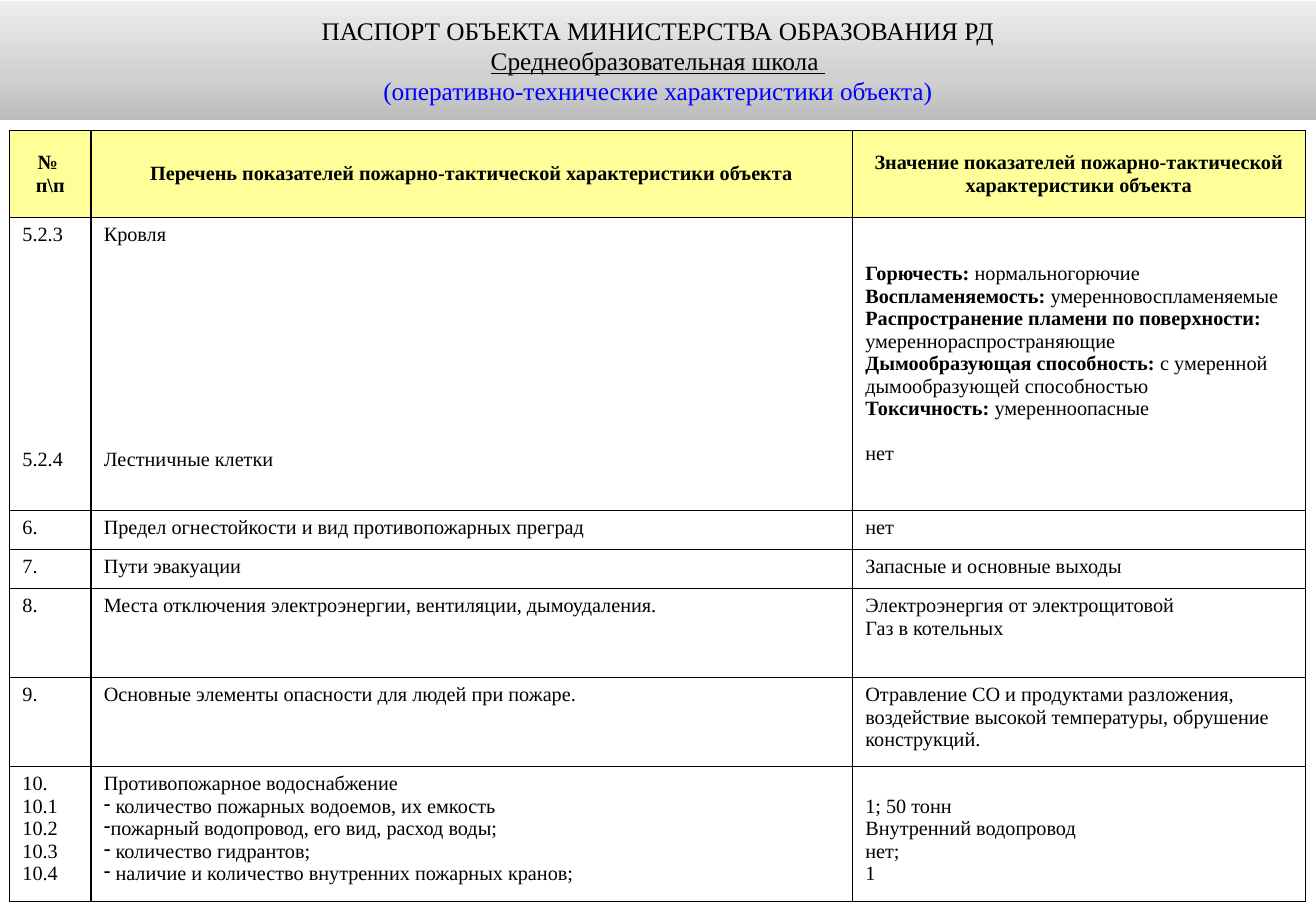
from copy import deepcopy
from typing import NamedTuple

from lxml import etree
from pptx import Presentation
from pptx.dml.color import RGBColor
from pptx.enum.shapes import MSO_SHAPE
from pptx.enum.text import MSO_ANCHOR, PP_ALIGN
from pptx.oxml.ns import qn
from pptx.util import Cm, Pt

CENTER = PP_ALIGN.CENTER
LEFT = PP_ALIGN.LEFT
MIDDLE = MSO_ANCHOR.MIDDLE
TOP = MSO_ANCHOR.TOP
RECTANGLE = MSO_SHAPE.RECTANGLE

BLACK = RGBColor(0x00, 0x00, 0x00)
WHITE = RGBColor(0xFF, 0xFF, 0xFF)
BLUE = RGBColor(0x00, 0x00, 0xFF)
YELLOW = RGBColor(0xFF, 0xFF, 0x99)
BANNER_STOPS = [
    (0, RGBColor(0xBC, 0xBC, 0xBC)),
    (0.35, RGBColor(0xD0, 0xD0, 0xD0)),
    (1, RGBColor(0xED, 0xED, 0xED)),
]
FONT = "Times New Roman"
TITLE_SIZE = 15
TABLE_SIZE = 12
LINE_PT = 13.3  # height of one table text line


class Line(NamedTuple):
    """One paragraph: bold label, plain text, lines of space before, dash bullet."""
    text: str = ""
    label: str = ""
    gap: int = 0
    dash: bool = False


TITLE = [  # text, colour, underlined
    ("ПАСПОРТ ОБЪЕКТА МИНИСТЕРСТВА ОБРАЗОВАНИЯ РД", BLACK, False),
    ("Среднеобразовательная школа ", BLACK, True),
    ("(оперативно-технические характеристики объекта)", BLUE, False),
]
HEADER = [
    [Line(label="№ "), Line(label=r"п\п")],
    [Line(label="Перечень показателей пожарно-тактической характеристики объекта")],
    [Line(label="Значение показателей пожарно-тактической характеристики объекта")],
]
BODY = [
    [
        [Line("5.2.3"), Line("5.2.4", gap=9)],
        [Line("Кровля"), Line("Лестничные клетки", gap=9)],
        [
            Line("нормальногорючие", "Горючесть: "),
            Line("умеренновоспламеняемые", "Воспламеняемость: "),
            Line(label="Распространение пламени по поверхности:"),
            Line("умереннораспространяющие"),
            Line("с умеренной дымообразующей способностью",
                 "Дымообразующая способность: "),
            Line("умеренноопасные", "Токсичность: "),
            Line("нет", gap=1),
        ],
    ],
    [
        [Line("6.")],
        [Line("Предел огнестойкости и вид противопожарных преград")],
        [Line("нет")],
    ],
    [
        [Line("7.")],
        [Line("Пути эвакуации")],
        [Line("Запасные и основные выходы")],
    ],
    [
        [Line("8.")],
        [Line("Места отключения электроэнергии, вентиляции, дымоудаления.")],
        [Line("Электроэнергия от электрощитовой"), Line("Газ в котельных")],
    ],
    [
        [Line("9.")],
        [Line("Основные элементы опасности для людей при пожаре.")],
        [Line("Отравление СО и продуктами разложения, воздействие высокой "
              "температуры, обрушение конструкций.")],
    ],
    [
        [Line("10."), Line("10.1"), Line("10.2"), Line("10.3"), Line("10.4")],
        [
            Line("Противопожарное водоснабжение"),
            Line(" количество пожарных водоемов, их емкость", dash=True),
            Line("пожарный водопровод, его вид, расход воды;", dash=True),
            Line(" количество гидрантов;", dash=True),
            Line(" наличие и количество внутренних пожарных кранов;", dash=True),
        ],
        [Line("1; 50 тонн"), Line("Внутренний водопровод"), Line("нет;"), Line("1")],
    ],
]
COL_WIDTHS = [1.7, 15.92, 9.47]
ROW_HEIGHTS = [1.82, 6.12, 0.82, 0.82, 1.86, 1.86, 2.82]
PROPERTIES_CELL = (1, 2)  # centred vertically
SUPPLY_CELL = (6, 2)      # starts one line lower


def style_run(r, size, color=BLACK, bold=False, underline=False):
    r.font.name = FONT
    r.font.size = Pt(size)
    r.font.color.rgb = color
    r.font.bold = bold
    r.font.underline = underline


def paragraphs(tf, count):
    return [tf.paragraphs[0]] + [tf.add_paragraph() for _ in range(count - 1)]


def write_lines(tf, lines, align):
    for p, line in zip(paragraphs(tf, len(lines)), lines):
        p.alignment = align
        if line.gap:
            p.space_before = Pt(line.gap * LINE_PT)
        if line.dash:
            pPr = p._p.get_or_add_pPr()
            pPr.set("marL", "0")
            pPr.set("indent", "0")
            etree.SubElement(pPr, qn("a:buChar")).set("char", "-")
        for text, bold in ((line.label, True), (line.text, False)):
            if text:
                r = p.add_run()
                r.text = text
                style_run(r, TABLE_SIZE, bold=bold)


def add_borders(cell):
    tcPr = cell._tc.get_or_add_tcPr()
    for i, side in enumerate(("a:lnL", "a:lnR", "a:lnT", "a:lnB")):
        ln = etree.Element(qn(side), w=str(Pt(1)))
        fill = etree.SubElement(ln, qn("a:solidFill"))
        etree.SubElement(fill, qn("a:srgbClr")).set("val", str(BLACK))
        tcPr.insert(i, ln)


def add_passport_table(slide):
    rows = [HEADER] + BODY
    table = slide.shapes.add_table(
        len(rows), len(COL_WIDTHS), Cm(0.2), Cm(2.73),
        Cm(sum(COL_WIDTHS)), Cm(sum(ROW_HEIGHTS))).table
    for col, width in zip(table.columns, COL_WIDTHS):
        col.width = Cm(width)
    for row, height in zip(table.rows, ROW_HEIGHTS):
        row.height = Cm(height)
    for i, row in enumerate(rows):
        for j, lines in enumerate(row):
            cell = table.cell(i, j)
            is_header = i == 0
            cell.margin_left = cell.margin_right = Cm(0.27)
            cell.margin_top = cell.margin_bottom = Cm(0.13)
            if (i, j) == SUPPLY_CELL:
                cell.margin_top = Cm(0.13) + Pt(LINE_PT)
            centred = is_header or (i, j) == PROPERTIES_CELL
            cell.vertical_anchor = MIDDLE if centred else TOP
            cell.fill.solid()
            cell.fill.fore_color.rgb = YELLOW if is_header else WHITE
            add_borders(cell)
            write_lines(cell.text_frame, lines, CENTER if is_header else LEFT)


def add_banner(slide, width):
    sp = slide.shapes.add_shape(RECTANGLE, 0, Cm(0.02), width, Cm(2.49))
    sp.shadow.inherit = False
    sp.line.fill.background()
    sp.fill.gradient()
    sp.fill.gradient_angle = 90
    stop_list = sp._element.spPr.find(".//" + qn("a:gsLst"))
    stop_list.insert(1, deepcopy(stop_list[0]))
    for stop, (position, color) in zip(sp.fill.gradient_stops, BANNER_STOPS):
        stop.position = position
        stop.color.rgb = color
    tf = sp.text_frame
    tf.word_wrap = True
    tf.vertical_anchor = MIDDLE
    for p, (text, color, underline) in zip(paragraphs(tf, len(TITLE)), TITLE):
        p.text = text
        p.alignment = CENTER
        style_run(p.runs[0], TITLE_SIZE, color, underline=underline)


def main():
    prs = Presentation()
    prs.slide_width, prs.slide_height = Cm(27.51), Cm(19.05)
    slide = prs.slides.add_slide(prs.slide_layouts[6])
    add_passport_table(slide)
    add_banner(slide, prs.slide_width)
    prs.save("out.pptx")


if __name__ == "__main__":
    main()
